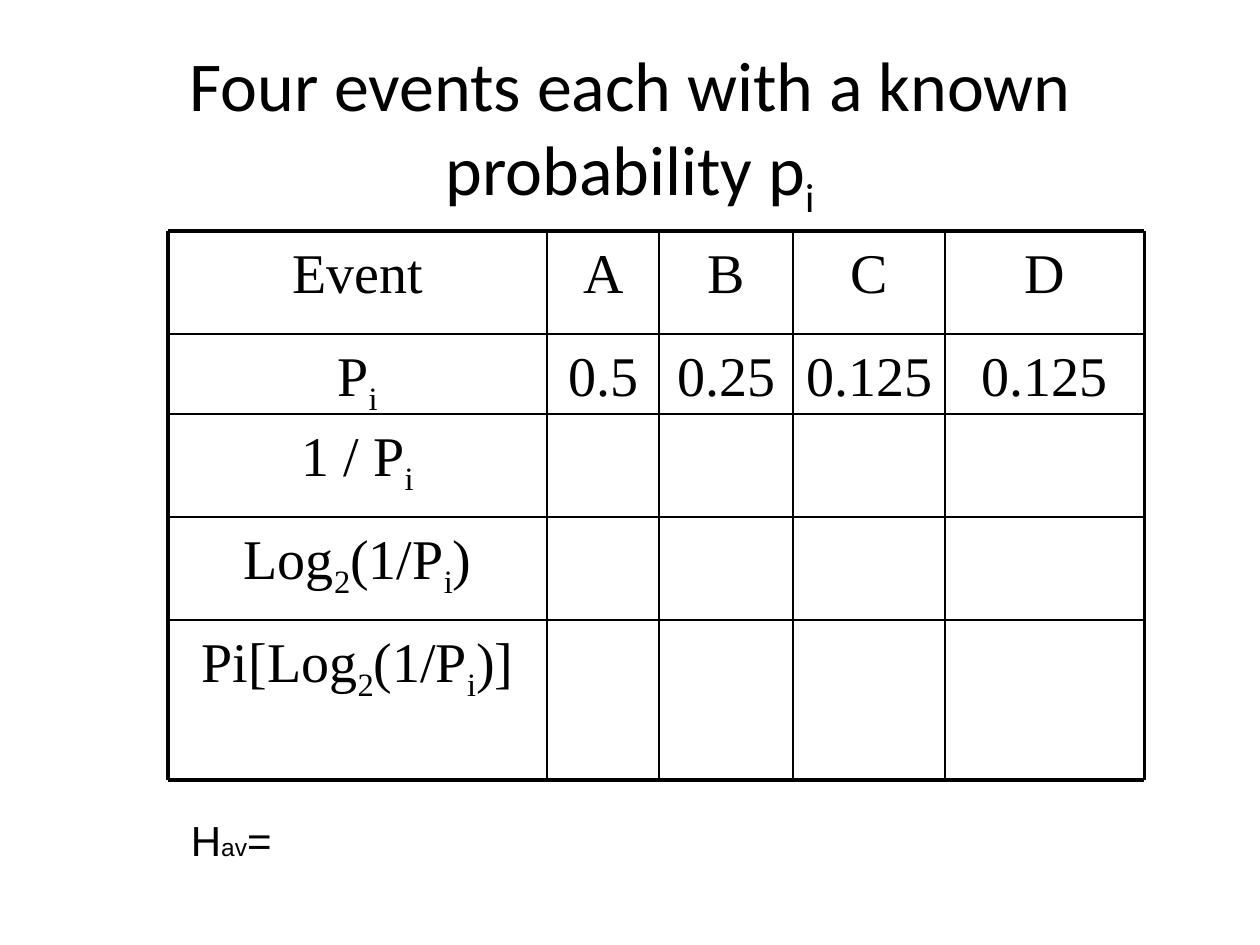
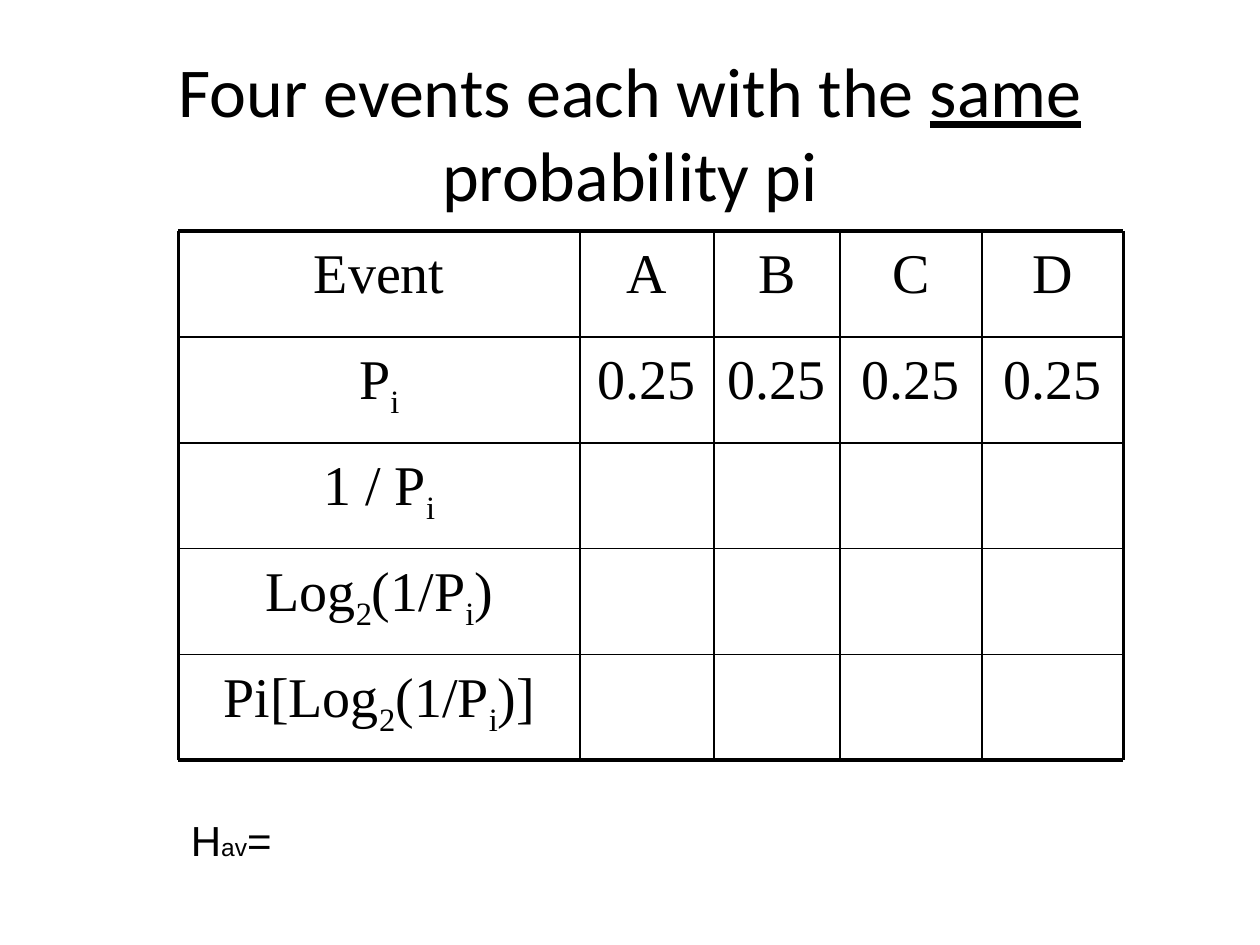
import itertools

import pptx
import pptx.dml.color
import pptx.enum.shapes
import pptx.enum.text
import pptx.oxml.ns
import pptx.util
from lxml import etree

Pt = pptx.util.Pt
qn = pptx.oxml.ns.qn
ALIGN = pptx.enum.text.PP_ALIGN
ANCHOR = pptx.enum.text.MSO_ANCHOR
STRAIGHT = pptx.enum.shapes.MSO_CONNECTOR.STRAIGHT
BLACK = pptx.dml.color.RGBColor(0, 0, 0)

# In each tuple of texts, every second one is marked (lowered or underlined).
LABELS = [("Event",), ("P", "i"), ("1 / P", "i"),
          ("Log", "2", "(1/P", "i", ")"), ("Pi[Log", "2", "(1/P", "i", ")]")]
EVENTS = ["A", "B", "C", "D"]
MEAN = [("H", 24), ("av", 14), ("=", 24)]
SLIDES = [
    dict(title=("Four events each with a known probability p", "i"), mark="sub",
         odds=["0.5", "0.25", "0.125", "0.125"], left=96,
         cols=[216.7, 64.1, 76.3, 87.1, 113.8], rows=[59, 45.4, 59, 59, 91.6]),
    dict(title=("Four events each with the ", "same", " probability pi"), mark="line",
         odds=["0.25"] * 4, left=102,
         cols=[229.5, 76.5, 72, 81, 81], rows=[60.5] * 5),
]

TITLE = (78, 30, 564, 90)
MEAN_BOX = (102, 462, 61, 37)
TOP = 132
THIN, THICK = 1, 2.25
PAD = 7.2        # space above the text of a cell
LINE = 42        # height of a line with a lowered sign
PLAIN = "{2D5ABB26-0587-4C30-8999-92F81FD0307C}"    # table style without edges


def add_run(para, text, font, size):
    run = para.add_run()
    run.text = text
    run.font.name = font
    run.font.size = Pt(size)
    run.font.color.rgb = BLACK
    return run


def add_mix(para, texts, font, size, mark="sub"):
    """Add the texts as runs, with every second run marked."""
    para.alignment = ALIGN.CENTER
    for i, text in enumerate(texts):
        run = add_run(para, text, font, size)
        if i % 2 and mark == "line":
            run.font.underline = True
        elif i % 2:
            run.font._element.set("baseline", "-25000")


def fit_rows(rows):
    """Give each row its height and pad; a row too low borrows from the next."""
    debt = 0
    for high in rows:
        pad = PAD - debt
        tall = max(high - debt, pad + LINE)
        debt += tall - high
        yield tall, pad


def add_grid(slide, left, cols, rows, odds):
    frame = slide.shapes.add_table(len(rows), len(cols), Pt(left), Pt(TOP),
                                   Pt(sum(cols)), Pt(sum(rows)))
    grid = frame.table
    grid.first_row = grid.horz_banding = False
    grid._tbl.tblPr.find(qn("a:tableStyleId")).text = PLAIN
    for col, width in zip(grid.columns, cols):
        col.width = Pt(width)
    values = [EVENTS, odds]
    for r, ((tall, pad), label) in enumerate(zip(fit_rows(rows), LABELS)):
        grid.rows[r].height = Pt(tall)
        texts = [label]
        if r < len(values):
            texts += [(value,) for value in values[r]]
        for cell, text in itertools.zip_longest(grid.rows[r].cells, texts, fillvalue=()):
            cell.fill.background()
            cell.margin_left = cell.margin_right = Pt(3)
            cell.margin_top, cell.margin_bottom = Pt(pad), 0
            add_mix(cell.text_frame.paragraphs[0], text, "Times New Roman", 32)


def add_line(slide, ends, width):
    line = slide.shapes.add_connector(STRAIGHT, *map(Pt, ends))
    line.line.color.rgb = BLACK
    line.line.width = Pt(width)
    etree.SubElement(line._element.spPr, qn("a:effectLst"))


def add_rules(slide, left, cols, rows):
    xs = list(itertools.accumulate(cols, initial=left))
    ys = list(itertools.accumulate(rows, initial=TOP))
    downs = [(x, ys[0], x, ys[-1]) for x in xs]
    overs = [(xs[0], y, xs[-1], y) for y in ys]
    for ends in downs[1:-1] + overs[1:-1]:
        add_line(slide, ends, THIN)
    for ends in downs[::len(cols)] + overs[::len(rows)]:
        add_line(slide, ends, THICK)


def add_title(slide, texts, mark):
    title = slide.shapes.title
    title.left, title.top, title.width, title.height = map(Pt, TITLE)
    title.text_frame.vertical_anchor = ANCHOR.MIDDLE
    add_mix(title.text_frame.paragraphs[0], texts, "Calibri", 40, mark)


def add_mean(slide):
    box = slide.shapes.add_textbox(*map(Pt, MEAN_BOX))
    box.text_frame.word_wrap = False
    for text, size in MEAN:
        add_run(box.text_frame.paragraphs[0], text, "Arial", size)


def main():
    deck = pptx.Presentation()
    deck.slide_width, deck.slide_height = Pt(720), Pt(540)
    for item in SLIDES:
        slide = deck.slides.add_slide(deck.slide_layouts[5])
        add_title(slide, item["title"], item["mark"])
        add_grid(slide, item["left"], item["cols"], item["rows"], item["odds"])
        add_rules(slide, item["left"], item["cols"], item["rows"])
        add_mean(slide)
    deck.save("out.pptx")


if __name__ == "__main__":
    main()
